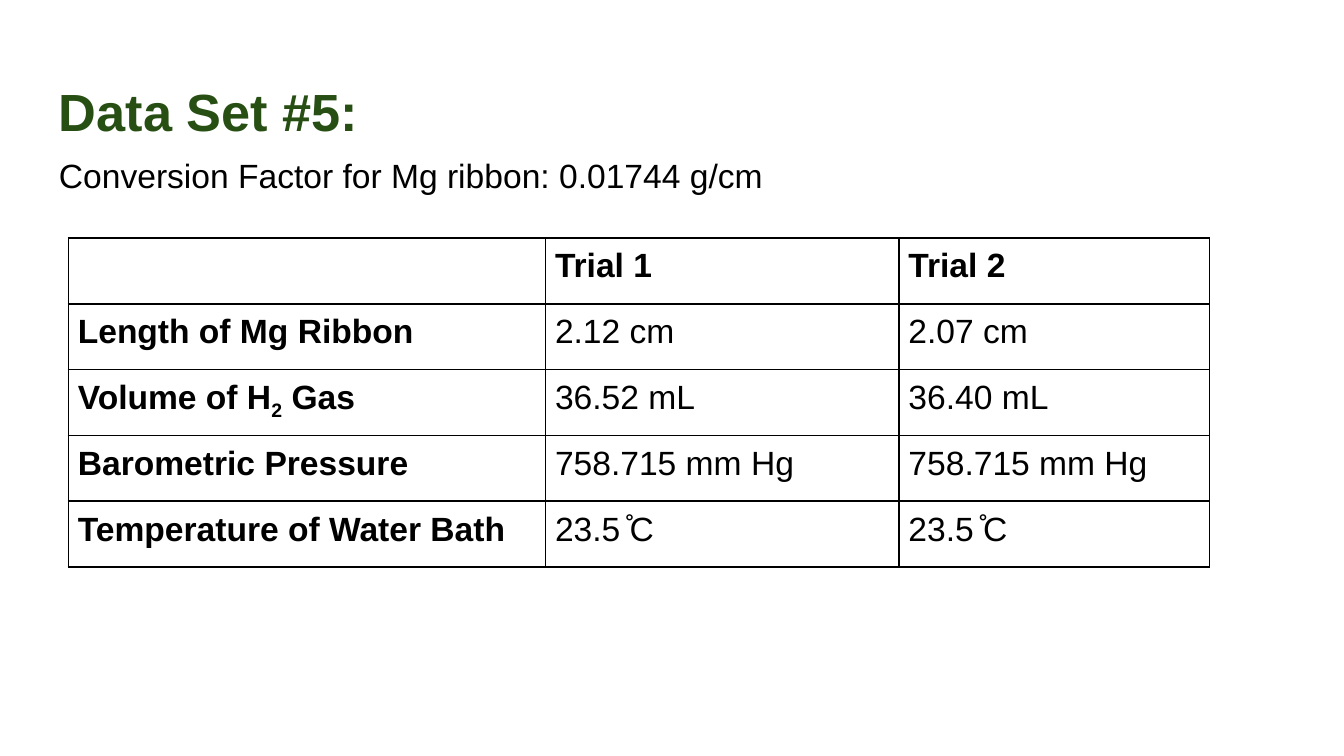
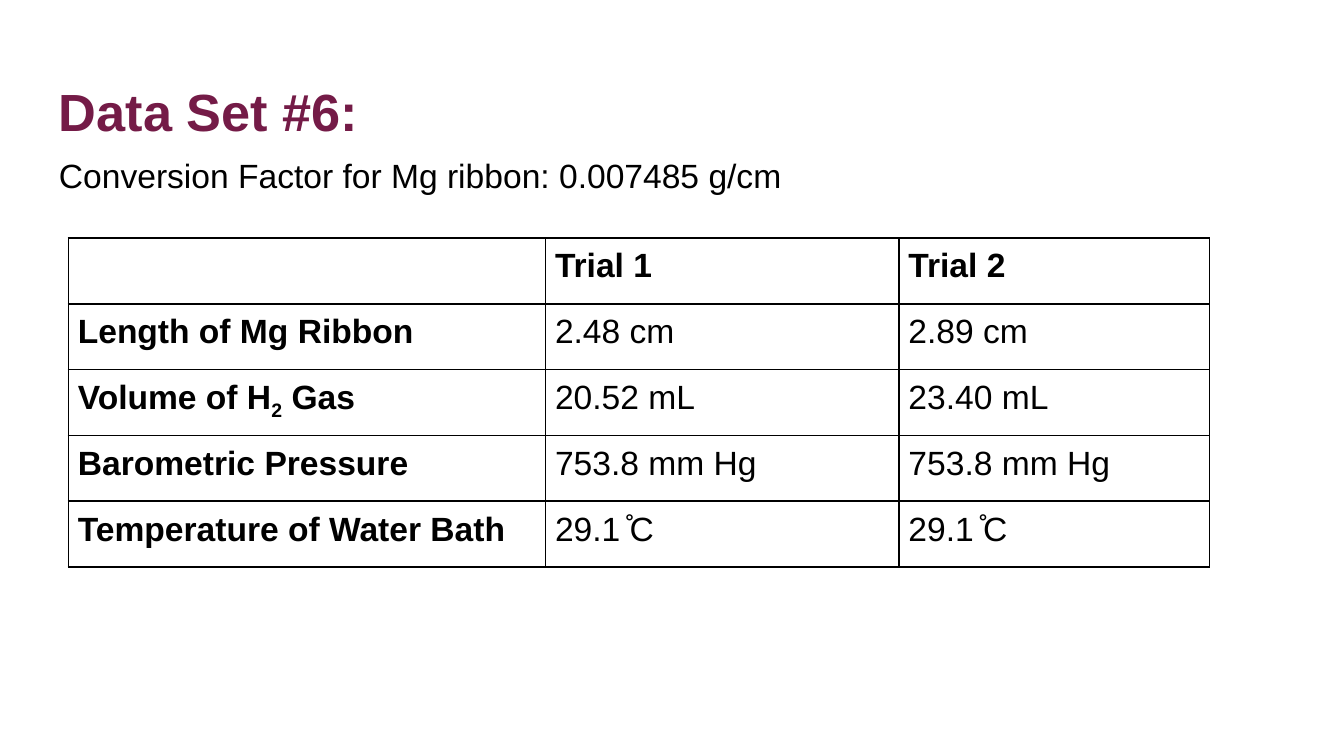
from lxml.etree import SubElement
from pptx import Presentation
from pptx.dml.color import RGBColor
from pptx.enum.text import MSO_ANCHOR, MSO_AUTO_SIZE
from pptx.oxml.ns import qn
from pptx.util import Inches, Pt

SLIDE_W = Inches(10)
SLIDE_H = SLIDE_W * 9 // 16
BLACK = "000000"
BORDER_PT = 1
TITLE_BOX = (0.34, 0.49, 9.32, 0.63)
FACTOR_BOX = (0.34, 1.01, 9.32, 0.63)
TABLE_BOX = (0.51, 1.77, 8.49, 2.45)
COLUMN_SHARES = (3.55, 2.63, 2.31)
TEXT_INSET = 0.1
CELL_INSET = 0.07
SIDES = ("left", "right", "top", "bottom")

TITLE_FORMAT = {"size": Pt(28), "bold": True}
BODY_FORMAT = {"size": Pt(18), "bold": False}
LABEL_FORMAT = {"size": Pt(18), "bold": True}

TRIALS = ("Trial 1", "Trial 2")
MEASURES = (
    ("Length of Mg Ribbon",),
    ("Volume of H", "2", " Gas"),
    ("Barometric Pressure",),
    ("Temperature of Water Bath",),
)

DATA_SETS = (
    {
        "title": "Data Set #5:",
        "accent": "274E13",
        "factor": "0.01744",
        "readings": (
            ("2.12 cm", "2.07 cm"),
            ("36.52 mL", "36.40 mL"),
            ("758.715 mm Hg", "758.715 mm Hg"),
            ("23.5 ̊C", "23.5 ̊C"),
        ),
    },
    {
        "title": "Data Set #6:",
        "accent": "741B47",
        "factor": "0.007485",
        "readings": (
            ("2.48 cm", "2.89 cm"),
            ("20.52 mL", "23.40 mL"),
            ("753.8 mm Hg", "753.8 mm Hg"),
            ("29.1 ̊C", "29.1 ̊C"),
        ),
    },
)


def set_all(target, values):
    for name, value in values.items():
        setattr(target, name, value)


def paint(color_holder, hex_color):
    color_holder.rgb = RGBColor.from_string(hex_color)


def margins(inset):
    return {f"margin_{side}": Inches(inset) for side in SIDES}


def write(paragraph, parts, text_format, color=BLACK):
    for index, part in enumerate(parts):
        run = paragraph.add_run()
        run.text = part
        set_all(run.font, {"name": "Arial", **text_format})
        paint(run.font.color, color)
        if index % 2:
            run._r.get_or_add_rPr().set("baseline", "-25000")


def add_line_of_text(slide, box, text, text_format, color=BLACK, spacing=1.0):
    frame = slide.shapes.add_textbox(*map(Inches, box)).text_frame
    set_all(frame, {
        "word_wrap": True,
        "auto_size": MSO_AUTO_SIZE.NONE,
        "vertical_anchor": MSO_ANCHOR.TOP,
        **margins(TEXT_INSET),
    })
    paragraph = frame.paragraphs[0]
    paragraph.line_spacing = spacing
    write(paragraph, (text,), text_format, color)


def add_borders(cell):
    properties = cell._tc.get_or_add_tcPr()
    for position, side in enumerate(("lnL", "lnR", "lnT", "lnB")):
        line = SubElement(properties, qn(f"a:{side}"), w=str(Pt(BORDER_PT)))
        fill = SubElement(line, qn("a:solidFill"))
        SubElement(fill, qn("a:srgbClr"), val=BLACK)
        properties.insert(position, line)


def add_cell(cell, parts, text_format):
    set_all(cell, margins(CELL_INSET))
    cell.fill.background()
    add_borders(cell)
    write(cell.text_frame.paragraphs[0], parts, text_format)


def add_readings_table(slide, box, readings):
    rows = [((), *((trial,) for trial in TRIALS))]
    rows += [(measure, *((value,) for value in values))
             for measure, values in zip(MEASURES, readings)]
    table = slide.shapes.add_table(
        len(rows), len(COLUMN_SHARES), *map(Inches, box)).table
    set_all(table, {"first_row": False, "horz_banding": False})
    width, height = box[2:]
    for column, share in zip(table.columns, COLUMN_SHARES):
        column.width = Inches(width * share / sum(COLUMN_SHARES))
    for r, row in enumerate(rows):
        table.rows[r].height = Inches(height / len(rows))
        for c, parts in enumerate(row):
            is_label = r == 0 or c == 0
            add_cell(table.cell(r, c), parts,
                     LABEL_FORMAT if is_label else BODY_FORMAT)


def add_data_set_slide(deck, data_set):
    slide = deck.slides.add_slide(deck.slide_layouts[6])
    add_line_of_text(slide, TITLE_BOX, data_set["title"], TITLE_FORMAT,
                     color=data_set["accent"])
    add_line_of_text(slide, FACTOR_BOX,
                     f"Conversion Factor for Mg ribbon: {data_set['factor']} g/cm",
                     BODY_FORMAT, spacing=1.15)
    add_readings_table(slide, TABLE_BOX, data_set["readings"])


def main():
    deck = Presentation()
    set_all(deck, {"slide_width": SLIDE_W, "slide_height": SLIDE_H})
    for data_set in DATA_SETS:
        add_data_set_slide(deck, data_set)
    deck.save("out.pptx")


if __name__ == "__main__":
    main()
